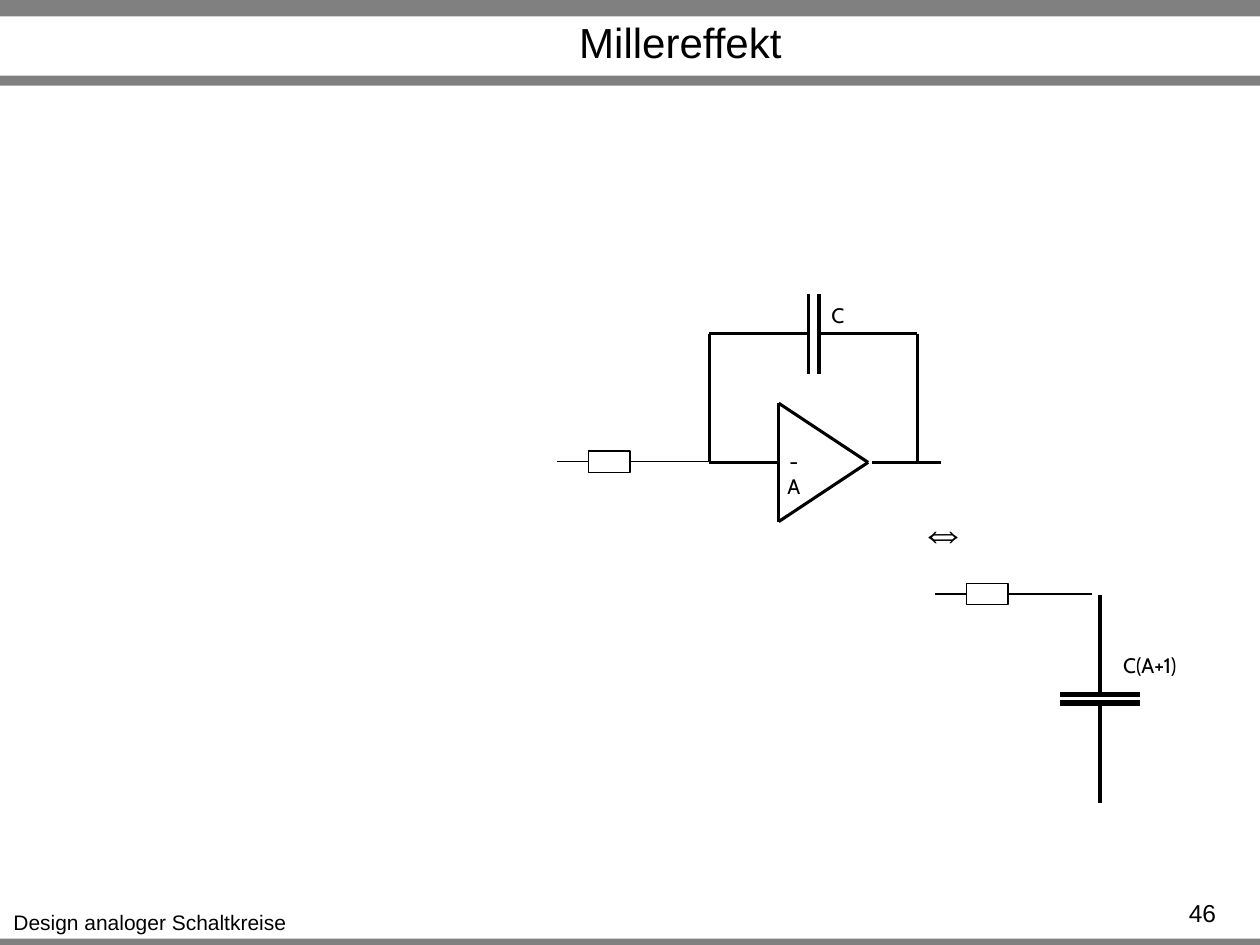
from dataclasses import dataclass

from lxml import etree
from pptx import Presentation
from pptx.dml.color import RGBColor
from pptx.enum.shapes import MSO_CONNECTOR, MSO_SHAPE
from pptx.enum.text import MSO_ANCHOR, PP_ALIGN
from pptx.oxml.ns import qn
from pptx.util import Inches, Pt

CENTER, RIGHT = PP_ALIGN.CENTER, PP_ALIGN.RIGHT
TOP, MIDDLE = MSO_ANCHOR.TOP, MSO_ANCHOR.MIDDLE
RECTANGLE, STRAIGHT = MSO_SHAPE.RECTANGLE, MSO_CONNECTOR.STRAIGHT
LEFT_SIDE, RIGHT_SIDE = 1, 3


@dataclass(frozen=True)
class Theme:
    ink: RGBColor = RGBColor(0, 0, 0)
    bar: RGBColor = RGBColor(0x80, 0x80, 0x80)
    body_font: str = "Arial"
    label_font: str = "Cabin"
    title_size: int = 24
    symbol_size: int = 28
    number_size: int = 14
    label_size: int = 12
    thin: float = 0.75
    wire: float = 1.75
    plate: float = 3


theme = Theme()
presentation = Presentation()
presentation.slide_width, presentation.slide_height = Inches(10), Inches(7.5)
slide = presentation.slides.add_slide(presentation.slide_layouts[6])
shapes = slide.shapes
unit = presentation.slide_width // 1000


def add_line(start, end, width):
    line = shapes.add_connector(STRAIGHT, *(round(value * unit) for value in (*start, *end)))
    line.line.color.rgb = theme.ink
    line.line.width = Pt(width)
    etree.SubElement(line._element.spPr, qn("a:effectLst"))
    return line


def add_text(text, box, size, font=theme.body_font, alignment=CENTER, anchor=TOP, wrap=True):
    text_box = shapes.add_textbox(*(value * unit for value in box))
    frame = text_box.text_frame
    frame.word_wrap = wrap
    frame.vertical_anchor = anchor
    frame.text = text
    paragraph = frame.paragraphs[0]
    paragraph.alignment = alignment
    run_font = paragraph.runs[0].font
    run_font.name, run_font.size, run_font.color.rgb = font, Pt(size), theme.ink


for top, height in ((745, 8), (0, 13), (60, 8)):
    bar = shapes.add_shape(RECTANGLE, 0, top * unit, 1000 * unit, height * unit)
    bar.shadow.inherit = False
    bar.fill.solid()
    bar.fill.fore_color.rgb = theme.bar
    bar.line.fill.background()

add_text("Design analoger Schaltkreise", (0, 717, 238, 30), theme.label_size, wrap=False)
add_text("46", (592, 708, 383, 42), theme.number_size, alignment=RIGHT)
add_text("Millereffekt", (130, 14, 820, 38), theme.title_size, anchor=MIDDLE)

input_x, output_x = 563, 728
signal_y, feedback_y = 367, 265
amplifier_left, amplifier_tip, amplifier_half = 618, 689, 47
plate_half, plate_gap = 31.5, 8

for outer_x, plate_x in ((input_x, 642), (output_x, 642 + plate_gap)):
    add_line((outer_x, feedback_y), (plate_x, feedback_y), theme.wire)
    add_line((plate_x, feedback_y - plate_half), (plate_x, feedback_y + plate_half), theme.wire)
    add_line((outer_x, feedback_y), (outer_x, signal_y), theme.wire)

amplifier_top = (amplifier_left, signal_y - amplifier_half)
amplifier_bottom = (amplifier_left, signal_y + amplifier_half)
amplifier_output = (amplifier_tip, signal_y)
add_line(amplifier_top, amplifier_bottom, theme.wire)
add_line(amplifier_top, amplifier_output, theme.wire)
add_line(amplifier_bottom, amplifier_output, theme.wire)
add_line((input_x, signal_y), (amplifier_left, signal_y), theme.wire)
add_line((692, signal_y), (747, signal_y), theme.wire)

miller_x, miller_y, lead_length = 873, 551, 79
for plate_y, direction in ((miller_y, -1), (miller_y + 7, 1)):
    add_line((miller_x, plate_y), (miller_x, plate_y + direction * lead_length), theme.wire)
    add_line((miller_x + plate_half, plate_y), (miller_x - plate_half, plate_y), theme.plate)

for left, middle in ((467, 366.5), (767, 471.5)):
    resistor = shapes.add_shape(
        RECTANGLE, left * unit, round((middle - 8.5) * unit), 33 * unit, 17 * unit)
    resistor.shadow.inherit = False
    resistor.fill.background()
    resistor.line.color.rgb = theme.ink
    resistor.line.width = Pt(theme.thin)
    right_lead = add_line((left + 33, middle), (left + 100, middle), theme.thin)
    right_lead.begin_connect(resistor, RIGHT_SIDE)
    left_lead = add_line((left - 25, middle), (left, middle), theme.thin)
    left_lead.end_connect(resistor, LEFT_SIDE)

for text, box, wrap in (
    ("-A", (615, 351, 30, 30), True),
    ("C", (650, 235, 30, 30), False),
    ("C(A+1)", (875, 513, 75, 30), False),
):
    add_text(text, box, theme.label_size, theme.label_font, wrap=wrap)
add_text("⇔", (692, 392, 113, 57), theme.symbol_size)

presentation.save("out.pptx")
